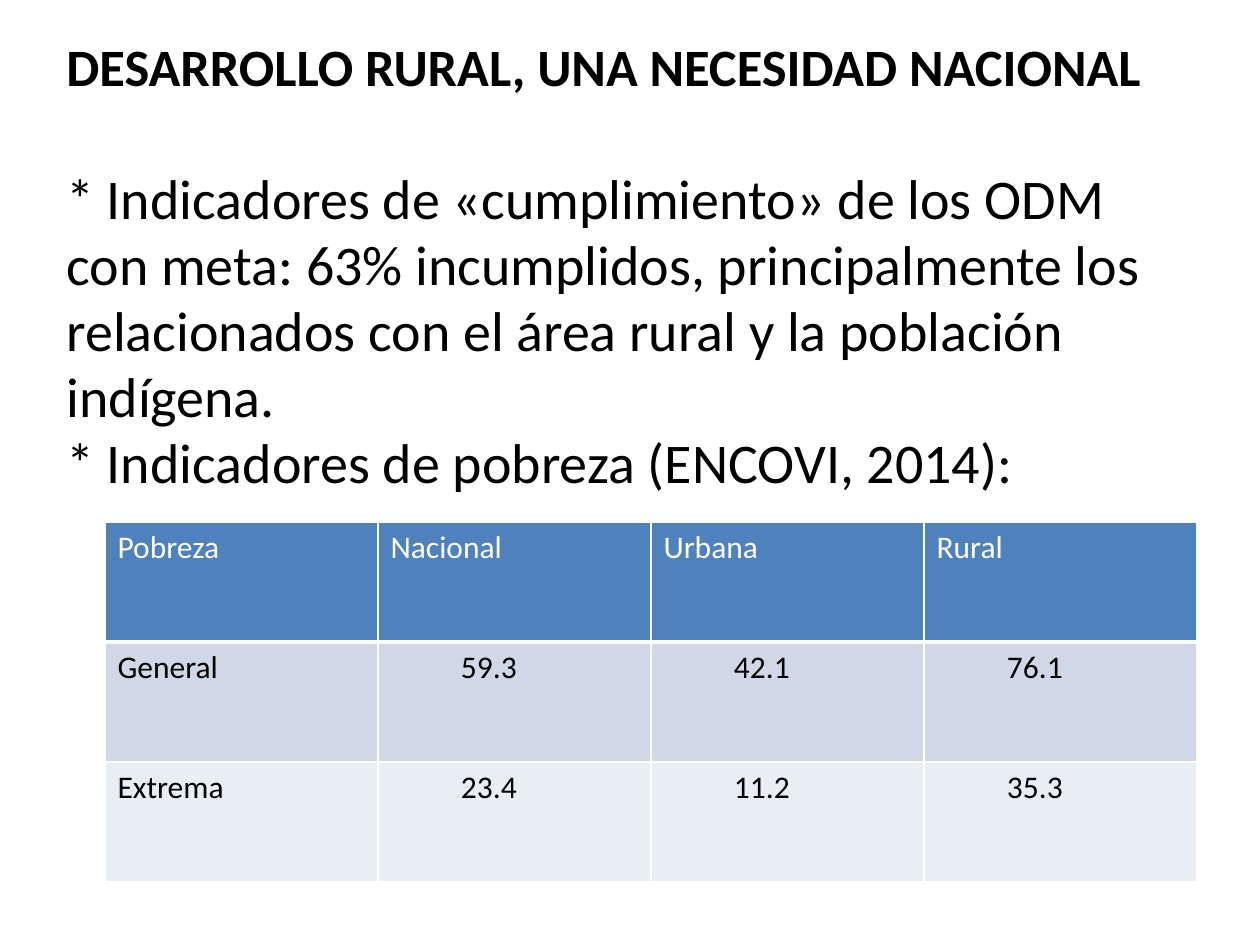
from dataclasses import dataclass

from lxml import etree
from pptx import Presentation
from pptx import util as u
from pptx.dml.color import RGBColor
from pptx.enum import text
from pptx.oxml import ns

PX = 914400 // 126


@dataclass(frozen=True)
class Theme:
    font: str = "Calibri"
    ink: str = "000000"
    white: str = "FFFFFF"
    header: str = "4F81BD"
    bands: tuple = ("D0D8E8", "E9EDF4")
    heading_pt: int = 30
    body_pt: int = 32
    cell_pt: int = 18


T = Theme()

HEADING = "DESARROLLO RURAL, UNA NECESIDAD NACIONAL"
POINTS = [
    "* Indicadores de «cumplimiento» de los ODM con meta: 63% incumplidos, "
    "principalmente los relacionados con el área rural y la población indígena.",
    "* Indicadores de pobreza (ENCOVI, 2014):",
]
POVERTY = [
    ("Pobreza", "Nacional", "Urbana", "Rural"),
    ("General", "59.3", "42.1", "76.1"),
    ("Extrema", "23.4", "11.2", "35.3"),
]


def px(n):
    return u.Emu(n * PX)


def style(p, size, color, bold=False):
    for r in p.runs:
        f = r.font
        f.name, f.size, f.bold = T.font, u.Pt(size), bold
        f.color.rgb = RGBColor.from_string(color)


def add_text(s, x, y, w, h):
    """Heading followed by the indicator points."""
    tf = s.shapes.add_textbox(px(x), px(y), px(w), px(h)).text_frame
    tf.word_wrap = True
    tf.vertical_anchor = text.MSO_ANCHOR.TOP
    tf.text = "\n".join([HEADING, *POINTS])
    heading, *points = tf.paragraphs
    style(heading, T.heading_pt, T.ink, bold=True)
    heading.space_after = u.Pt(40)
    for p in points:
        style(p, T.body_pt, T.ink)
        p.line_spacing = 0.98


def set_borders(cell, bottom_pt):
    tc_pr = cell._tc.get_or_add_tcPr()
    widths = {"lnL": 1, "lnR": 1, "lnT": 1, "lnB": bottom_pt}
    for i, (tag, pt) in enumerate(widths.items()):
        ln = etree.Element(ns.qn(f"a:{tag}"), w=str(u.Pt(pt)))
        fill = etree.SubElement(ln, ns.qn("a:solidFill"))
        etree.SubElement(fill, ns.qn("a:srgbClr"), val=T.white)
        tc_pr.insert(i, ln)


def add_table(s, x, y, col_w, row_h, rows):
    n_rows, n_cols = len(rows), len(rows[0])
    table = s.shapes.add_table(n_rows, n_cols, px(x), px(y),
                               px(col_w * n_cols), px(row_h * n_rows)).table
    for i, row in enumerate(rows):
        is_header = i == 0
        fill = T.header if is_header else T.bands[(i - 1) % 2]
        for j, value in enumerate(row):
            cell = table.cell(i, j)
            cell.text = value
            style(cell.text_frame.paragraphs[0], T.cell_pt,
                  T.white if is_header else T.ink)
            cell.fill.solid()
            cell.fill.fore_color.rgb = RGBColor.from_string(fill)
            # Figures sit further in than the labels
            if not is_header and j > 0:
                cell.margin_left = px(83)
            set_borders(cell, 3 if is_header else 1)


def main():
    prs = Presentation()
    prs.slide_width, prs.slide_height = u.Inches(10), u.Inches(7.5)
    s = prs.slides.add_slide(prs.slide_layouts[6])

    # Heading and points
    add_text(s, 54, 28, 1134, 480)

    # Poverty rates by area
    add_table(s, 105, 522, 273, 120, POVERTY)

    prs.save("out.pptx")


if __name__ == "__main__":
    main()
